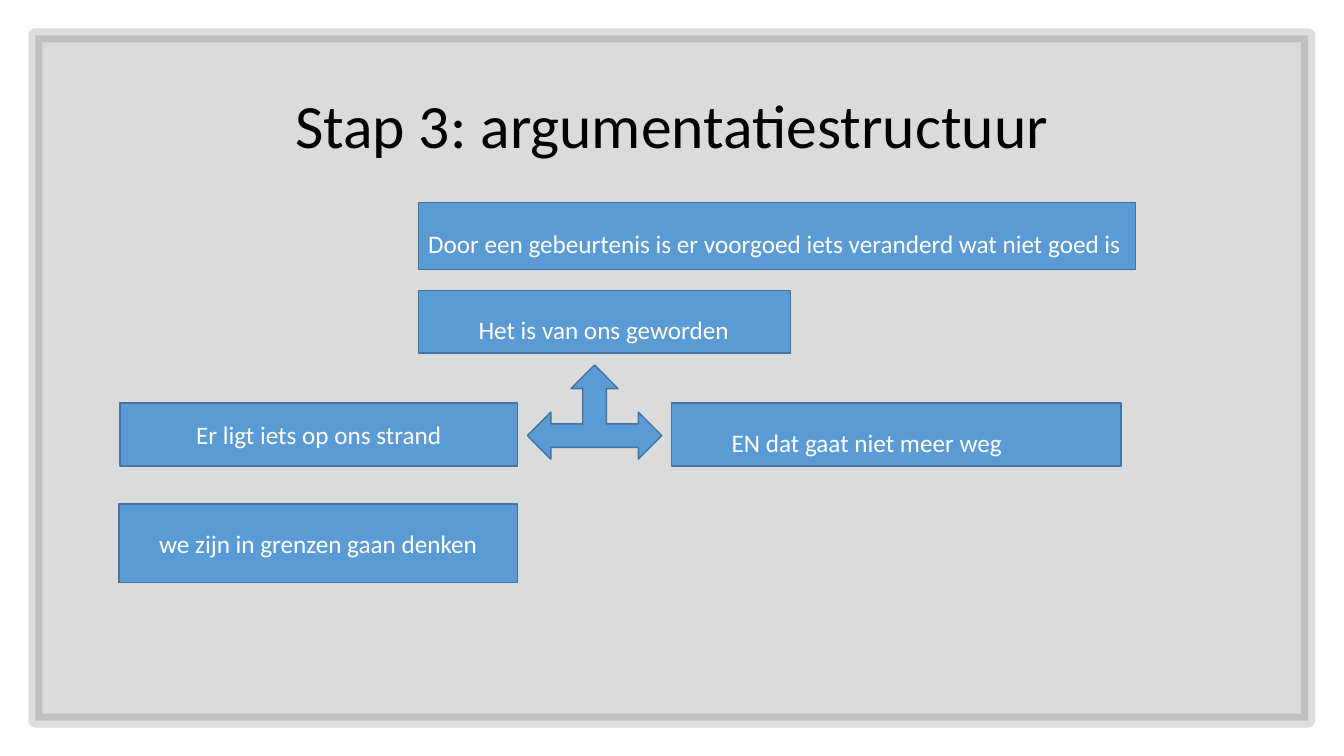
"""Build the slide on the argument structure of step 3."""
from lxml import etree
from pptx import Presentation
from pptx import util as u
from pptx.dml.color import RGBColor
from pptx.enum import shapes, text
from pptx.oxml.ns import qn

COLOURS = {"frame": "000000", "border": "262626", "title": "000000",
           "box": "5B9BD5", "edge": "43739E", "label": "FFFFFF"}
ALIGN = text.PP_ALIGN


def write(shape, content, size=18, colour="label", align=ALIGN.LEFT, spacing=1.0, indent=0):
    """Put one formatted paragraph into a shape."""
    frame = shape.text_frame
    frame.word_wrap = True
    frame.auto_size = text.MSO_AUTO_SIZE.NONE
    frame.vertical_anchor = text.MSO_ANCHOR.MIDDLE
    paragraph = frame.paragraphs[0]
    paragraph.alignment = align
    paragraph.line_spacing = spacing
    if indent:
        paragraph.level = 1
        properties = paragraph._p.get_or_add_pPr()
        properties.set("marL", str(u.Cm(indent)))
        properties.set("indent", "0")
    run = paragraph.add_run()
    run.text = content
    run.font.name = "Calibri"
    run.font.size = u.Pt(size)
    run.font.color.rgb = RGBColor.from_string(COLOURS[colour])


class SlideBuilder:
    """Hold the colours and the current slide, and add its elements."""

    def __init__(self, presentation, colours):
        self.colours = colours
        self.slide = presentation.slides.add_slide(presentation.slide_layouts[5])

    def title(self, content, *place):
        """Move and fill the title placeholder."""
        shape = self.slide.shapes.title
        shape.left, shape.top, shape.width, shape.height = map(u.Cm, place)
        write(shape, content, size=44, colour="title", align=ALIGN.CENTER, spacing=0.9)

    def shape(self, kind, *place, fill="box", line="edge", width=1):
        """Add a preset shape with a fill and an outline."""
        shape = self.slide.shapes.add_shape(kind, *map(u.Cm, place))
        shape.shadow.inherit = False
        shape.fill.solid()
        shape.fill.fore_color.rgb = RGBColor.from_string(self.colours[fill])
        shape.line.color.rgb = RGBColor.from_string(self.colours[line])
        shape.line.width = u.Pt(width)
        return shape

    def frame(self, *place):
        """Add the translucent frame behind everything else."""
        shape = self.shape(shapes.MSO_SHAPE.RECTANGLE, *place,
                           fill="frame", line="border", width=10)
        for colour, opacity in zip(shape._element.spPr.iter(qn("a:srgbClr")), (14, 15)):
            etree.SubElement(colour, qn("a:alpha"), val=str(opacity * 1000))
        self.slide.shapes._spTree.insert(2, shape._element)

    def box(self, content, *place, **style):
        """Add a labelled rectangle."""
        write(self.shape(shapes.MSO_SHAPE.RECTANGLE, *place), content, **style)


def main():
    """Create and save the presentation."""
    presentation = Presentation()
    presentation.slide_width = u.Cm(33.87)
    presentation.slide_height = u.Cm(19.05)
    builder = SlideBuilder(presentation, COLOURS)
    builder.frame(0.89, 0.89, 32.08, 17.27)
    builder.title("Stap 3: argumentatiestructuur", 2.33, 1.75, 29.21, 2.97)

    centred = {"align": ALIGN.CENTER}
    indented = {"spacing": 1.5, "indent": 1.27}
    builder.box("Door een gebeurtenis is er voorgoed iets veranderd wat niet goed is",
                10.54, 5.1, 18.07, 1.7, spacing=1.5)
    builder.box("Het is van ons geworden", 10.54, 7.32, 9.39, 1.58, **indented)
    builder.box("Er ligt iets op ons strand", 3.03, 10.16, 10.01, 1.58, **centred)
    builder.box("EN dat gaat niet meer weg", 16.92, 10.16, 11.33, 1.58,
                align=ALIGN.JUSTIFY, **indented)
    builder.box("we zijn in grenzen gaan denken", 3.0, 12.7, 10.04, 1.98, **centred)
    builder.shape(shapes.MSO_SHAPE.LEFT_RIGHT_UP_ARROW, 13.29, 9.2, 3.39, 2.37)
    presentation.save("out.pptx")


if __name__ == "__main__":
    main()
